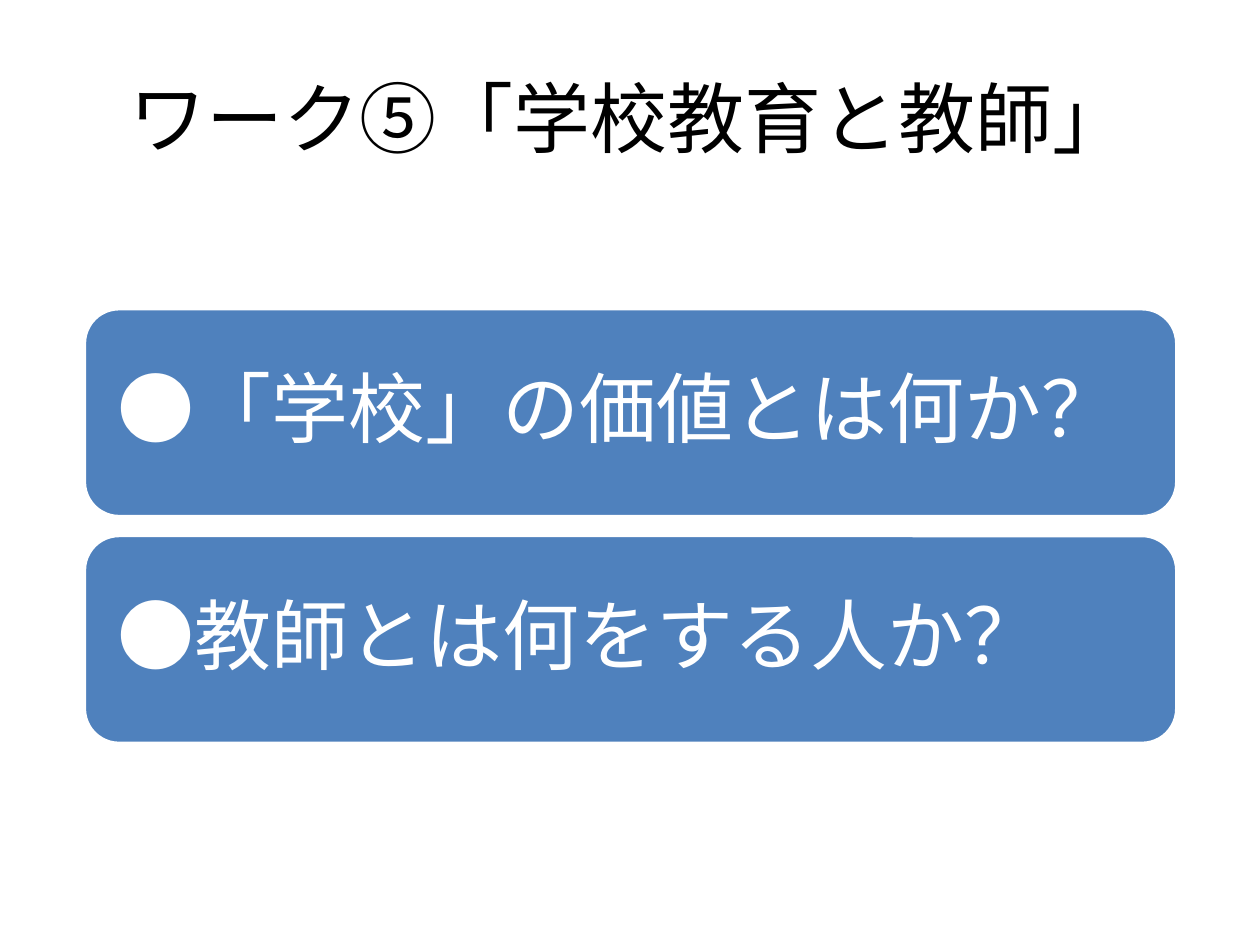
from pptx import Presentation
from pptx.dml.color import RGBColor
from pptx.enum.shapes import MSO_SHAPE
from pptx.enum.text import MSO_ANCHOR, PP_ALIGN
from pptx.util import Inches, Pt

WHITE = RGBColor(0xFF, 0xFF, 0xFF)
BLACK = RGBColor(0x00, 0x00, 0x00)
BLUE = RGBColor(0x4F, 0x81, 0xBD)

QUESTIONS = ["●「学校」の価値とは何か？", "●教師とは何をする人か？"]
BAR_TOP, BAR_HEIGHT, BAR_PITCH = 2.45 / 7.5, 0.22, 0.24


class SlideBuilder:
    """Holds the text style and the current slide."""
    font_name = "Cabin"
    font_size = Pt(44)

    def __init__(self, deck):
        self.deck = deck
        self.page = deck.slides.add_slide(deck.slide_layouts[6])

    def area(self, left, top, width, height):
        """Turn shares of the slide's size into lengths."""
        across, down = self.deck.slide_width, self.deck.slide_height
        return (round(left * across), round(top * down),
                round(width * across), round(height * down))

    def set_text(self, box, text, color, alignment):
        frame = box.text_frame
        frame.word_wrap = True
        frame.vertical_anchor = MSO_ANCHOR.MIDDLE
        para = frame.paragraphs[0]
        para.text = text
        para.alignment = alignment
        para.font.name = self.font_name
        para.font.size = self.font_size
        para.font.color.rgb = color
        return para

    def title(self, text):
        box = self.page.shapes.add_textbox(*self.area(0.05, 0.04, 0.9, 1 / 6))
        self.set_text(box, text, BLACK, PP_ALIGN.CENTER)

    def question_bar(self, text, top):
        bar = self.page.shapes.add_shape(
            MSO_SHAPE.ROUNDED_RECTANGLE, *self.area(0.067, top, 0.867, BAR_HEIGHT))
        bar.shadow.inherit = False
        bar.fill.solid()
        bar.fill.fore_color.rgb = BLUE
        bar.line.color.rgb = WHITE
        bar.line.width = Pt(2)
        frame = bar.text_frame
        frame.margin_left = frame.margin_right = Inches(0.18)
        frame.margin_top = frame.margin_bottom = Inches(0.18)
        self.set_text(bar, text, WHITE, PP_ALIGN.LEFT).line_spacing = 0.9


def main():
    deck = Presentation()
    deck.slide_width, deck.slide_height = Inches(10), Inches(7.5)
    builder = SlideBuilder(deck)
    builder.title("ワーク⑤「学校教育と教師」")
    for row, question in enumerate(QUESTIONS):
        builder.question_bar(question, BAR_TOP + row * BAR_PITCH)
    deck.save("out.pptx")


if __name__ == "__main__":
    main()
